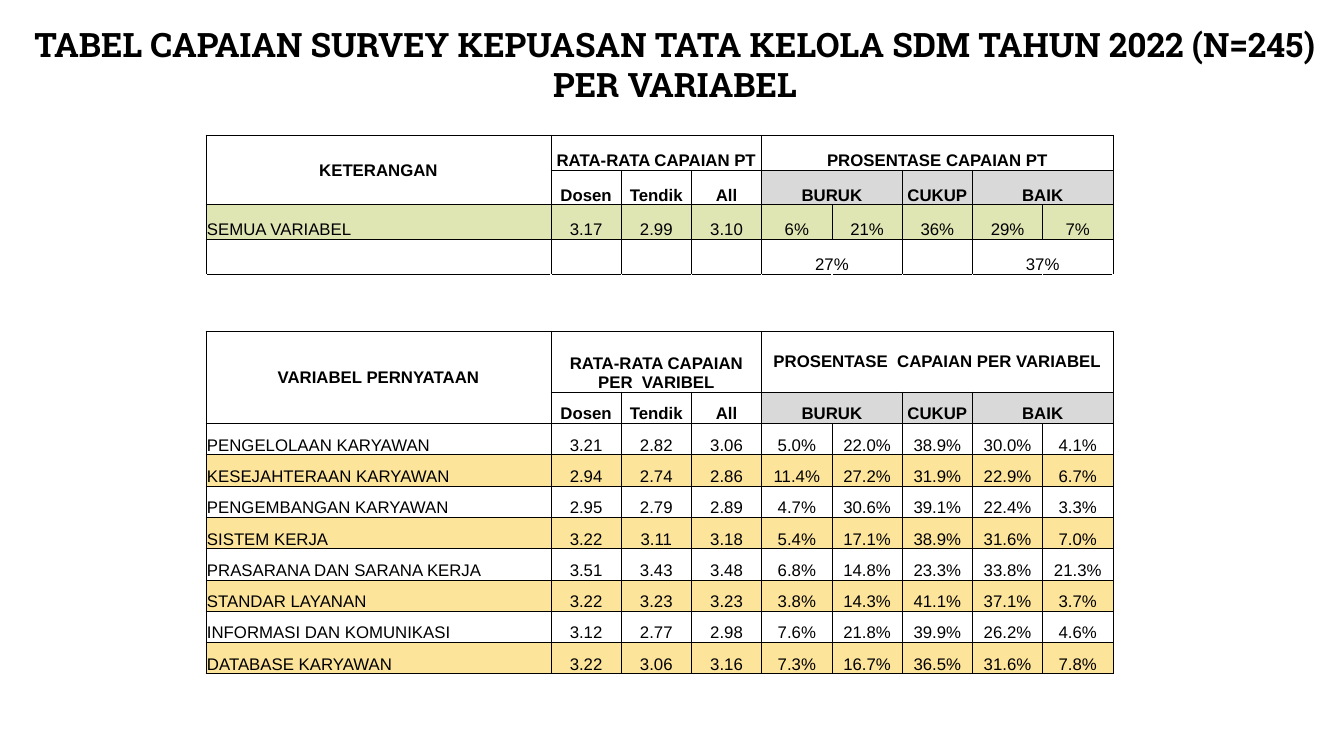
from dataclasses import dataclass

import pptx
import pptx.dml.color
import pptx.enum.text
import pptx.util
from lxml import etree
from pptx.oxml.ns import qn

TITLE = ["TABEL CAPAIAN SURVEY KEPUASAN TATA KELOLA SDM TAHUN 2022 (N=245)", "PER VARIABEL"]
SUBHEADS = ["", "Dosen", "Tendik", "All", "BURUK", "", "CUKUP", "BAIK", ""]
OVERALL = [
    ["KETERANGAN", "RATA-RATA CAPAIAN PT", "", "", "PROSENTASE CAPAIAN PT", "", "", "", ""],
    SUBHEADS,
    ["SEMUA VARIABEL", "3.17", "2.99", "3.10", "6%", "21%", "36%", "29%", "7%"],
    ["", "", "", "", "27%", "", "", "37%", ""],
    [""] * 9,
]
VARIABLES = [
    ["VARIABEL PERNYATAAN", "RATA-RATA CAPAIAN PER  VARIBEL", "", "",
     "PROSENTASE  CAPAIAN PER VARIABEL", "", "", "", ""],
    SUBHEADS,
    ["PENGELOLAAN KARYAWAN", "3.21", "2.82", "3.06", "5.0%", "22.0%", "38.9%", "30.0%", "4.1%"],
    ["KESEJAHTERAAN KARYAWAN", "2.94", "2.74", "2.86", "11.4%", "27.2%", "31.9%", "22.9%", "6.7%"],
    ["PENGEMBANGAN KARYAWAN", "2.95", "2.79", "2.89", "4.7%", "30.6%", "39.1%", "22.4%", "3.3%"],
    ["SISTEM KERJA", "3.22", "3.11", "3.18", "5.4%", "17.1%", "38.9%", "31.6%", "7.0%"],
    ["PRASARANA DAN SARANA KERJA", "3.51", "3.43", "3.48", "6.8%", "14.8%", "23.3%", "33.8%", "21.3%"],
    ["STANDAR LAYANAN", "3.22", "3.23", "3.23", "3.8%", "14.3%", "41.1%", "37.1%", "3.7%"],
    ["INFORMASI DAN KOMUNIKASI", "3.12", "2.77", "2.98", "7.6%", "21.8%", "39.9%", "26.2%", "4.6%"],
    ["DATABASE KARYAWAN", "3.22", "3.06", "3.16", "7.3%", "16.7%", "36.5%", "31.6%", "7.8%"],
]
# Spans as (row, column, rows, columns)
HEADER_SPANS = [(0, 0, 2, 1), (0, 1, 1, 3), (0, 4, 1, 5), (1, 4, 1, 2), (1, 7, 1, 2)]
TOTAL_SPANS = [(3, 4, 1, 2), (3, 7, 1, 2)]


@dataclass(frozen=True)
class Theme:
    ink: str = "000000"
    grey: str = "D9D9D9"
    green: str = "DFE5B3"
    yellow: str = "FDE49B"
    title_font: str = "Roboto Slab"
    table_font: str = "Arial"
    title_size: int = 24
    table_size: int = 12
    border: float = 0.5


THEME = Theme()
ALIGN = pptx.enum.text.PP_ALIGN
ANCHOR = pptx.enum.text.MSO_ANCHOR
TABLE_LEFT, TABLE_WIDTH, LABEL_WIDTH = 206, 907, 345


def px(length):
    return pptx.util.Emu(round(length * 914400 / 100.8))


def write(frame, lines, *, font, size, bold=False, align=ALIGN.CENTER):
    for index, line in enumerate(lines):
        paragraph = frame.paragraphs[0] if index == 0 else frame.add_paragraph()
        paragraph.alignment = align
        run = paragraph.add_run()
        run.text = line
        run.font.name = font
        run.font.size = pptx.util.Pt(size)
        run.font.bold = bold
        run.font.color.rgb = pptx.dml.color.RGBColor.from_string(THEME.ink)


def add_borders(cell, sides):
    properties = cell._tc.get_or_add_tcPr()
    for side in sides:
        line = etree.SubElement(properties, qn(f"a:ln{side}"), w=str(pptx.util.Pt(THEME.border)))
        fill = etree.SubElement(line, qn("a:solidFill"))
        etree.SubElement(fill, qn("a:srgbClr"), val=THEME.ink)


def add_survey_table(slide, rows, *, top, height, head_height, spans, row_fills, middle_cells):
    """Add a table whose rows below the first share the height left under it."""
    columns = len(SUBHEADS)
    frame = slide.shapes.add_table(len(rows), columns, px(TABLE_LEFT), px(top), px(TABLE_WIDTH), px(height))
    table = frame.table
    table.first_row = table.horz_banding = False
    for index, column in enumerate(table.columns):
        column.width = px((TABLE_WIDTH - LABEL_WIDTH) / (columns - 1) if index else LABEL_WIDTH)
    for index, row in enumerate(table.rows):
        row.height = px((height - head_height) / (len(rows) - 1) if index else head_height)

    for r, values in enumerate(rows):
        is_spacer = not any(values)
        for c, value in enumerate(values):
            cell = table.cell(r, c)
            cell.margin_left = cell.margin_right = cell.margin_top = px(1)
            cell.margin_bottom = 0
            cell.vertical_anchor = ANCHOR.MIDDLE if (r, c) in middle_cells else ANCHOR.BOTTOM
            add_borders(cell, "T" if is_spacer else "LRTB")
            color = THEME.grey if r == 1 and c >= 4 else row_fills.get(r)
            if color:
                cell.fill.solid()
                cell.fill.fore_color.rgb = pptx.dml.color.RGBColor.from_string(color)
            else:
                cell.fill.background()
            if value:
                write(cell.text_frame, [value], font=THEME.table_font, size=THEME.table_size, bold=r < 2,
                      align=ALIGN.LEFT if c == 0 and r >= 2 else ALIGN.CENTER)
    for r, c, row_count, column_count in spans:
        table.cell(r, c).merge(table.cell(r + row_count - 1, c + column_count - 1))


def add_title(slide):
    title = slide.shapes.title
    title.left, title.top, title.width, title.height = px(12), px(19), px(1326), px(92)
    frame = title.text_frame
    frame.word_wrap = False
    frame.auto_size = pptx.enum.text.MSO_AUTO_SIZE.SHAPE_TO_FIT_TEXT
    frame.vertical_anchor = ANCHOR.TOP
    write(frame, TITLE, font=THEME.title_font, size=THEME.title_size, bold=True)


def main():
    presentation = pptx.Presentation()
    presentation.slide_width, presentation.slide_height = px(1344), px(756)
    slide = presentation.slides.add_slide(presentation.slide_layouts[5])
    add_survey_table(slide, OVERALL, top=135, height=174, head_height=35,
                     spans=HEADER_SPANS + TOTAL_SPANS, row_fills={2: THEME.green}, middle_cells={(0, 0)})
    add_survey_table(slide, VARIABLES, top=331, height=343, head_height=61, spans=HEADER_SPANS,
                     row_fills={r: THEME.yellow for r in range(3, len(VARIABLES), 2)},
                     middle_cells={(0, 0), (0, 4)})
    add_title(slide)
    presentation.save("out.pptx")


if __name__ == "__main__":
    main()
